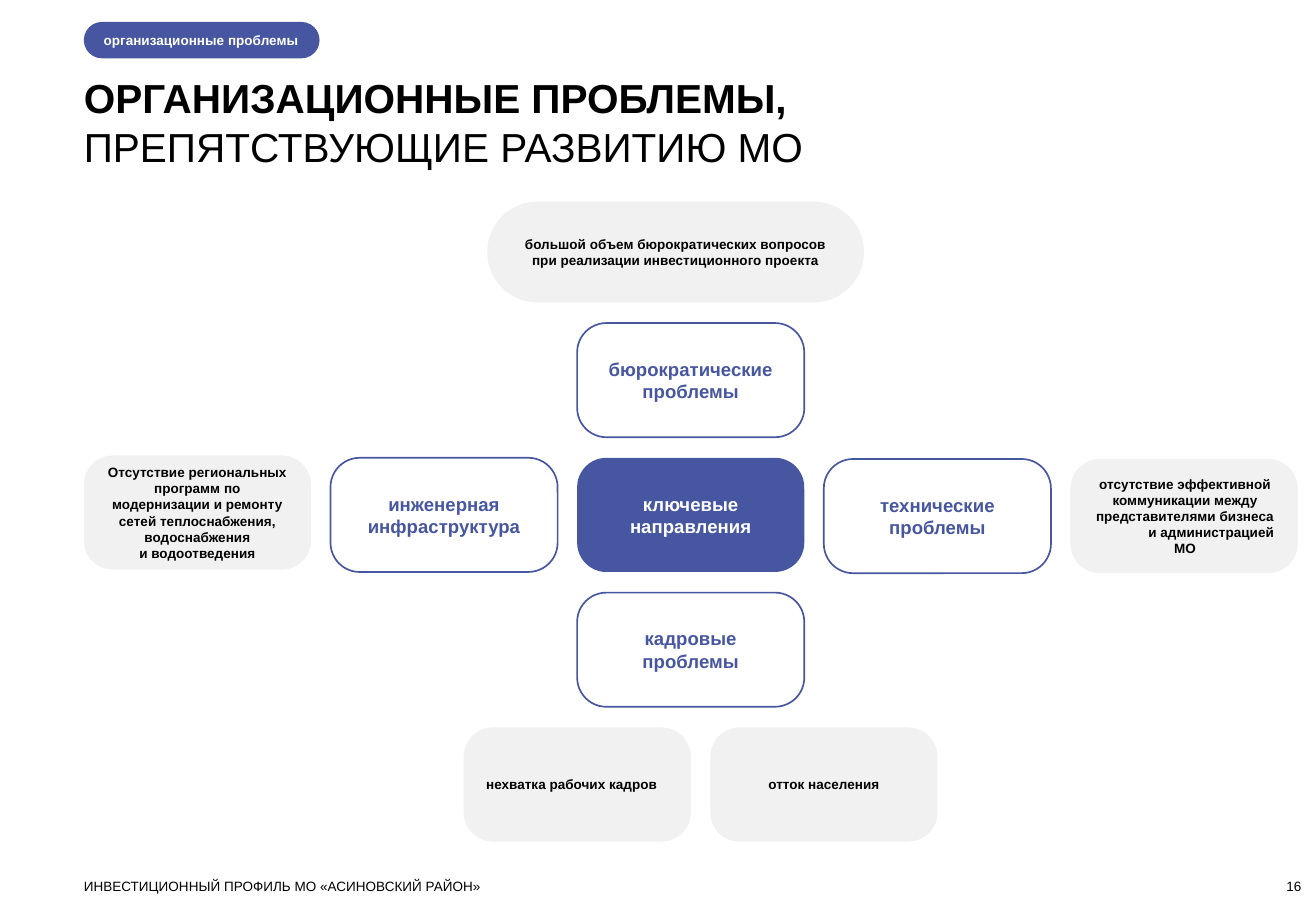
from dataclasses import dataclass

import pptx
import pptx.dml.color
import pptx.enum.shapes
import pptx.enum.text
import pptx.util

Pt = pptx.util.Pt
Align = pptx.enum.text.PP_ALIGN
Anchor = pptx.enum.text.MSO_ANCHOR
RGB = pptx.dml.color.RGBColor


@dataclass(frozen=True)
class Theme:
    font: str = "Arial"
    blue: RGB = RGB(0x47, 0x56, 0xA0)
    grey: RGB = RGB(0xF1, 0xF1, 0xF1)
    black: RGB = RGB(0, 0, 0)
    white: RGB = RGB(0xFF, 0xFF, 0xFF)
    title: int = 24
    label: int = 11
    small: int = 8


THEME = Theme()
LEFT, TOP = 49.7, 191.5
CARD_WIDTH, CARD_HEIGHT = 134.6, 67.7
COLUMN_STEP, ROW_STEP = 146.15, 79.9
NO_INSETS = (0, 0, 0, 0)
CARD_INSETS = (7.2, 3.6, 7.2, 3.6)


def set_frame(box, insets, anchor):
    frame = box.text_frame
    frame.word_wrap = True
    frame.vertical_anchor = anchor
    frame.margin_left, frame.margin_top, frame.margin_right, frame.margin_bottom = map(Pt, insets)


def write(box, lines, size, color, bold=False, align=Align.LEFT):
    """Put each line in its own paragraph and return the paragraphs."""
    frame = box.text_frame
    for index, line in enumerate(lines):
        para = frame.add_paragraph() if index else frame.paragraphs[0]
        para.alignment = align
        span = para.add_run()
        span.text = line
        span.font.name = THEME.font
        span.font.size = Pt(size)
        span.font.bold = bold
        span.font.color.rgb = color
    return frame.paragraphs


def add_text(page, place, lines, size, anchor=Anchor.TOP, align=Align.LEFT):
    box = page.shapes.add_textbox(*map(Pt, place))
    set_frame(box, NO_INSETS, anchor)
    return write(box, lines, size, THEME.black, align=align)


def add_rounded(page, place, rounding, fill=None, insets=CARD_INSETS):
    """Add a filled rounded box, or a blue outlined one when there is no fill."""
    kind = pptx.enum.shapes.MSO_SHAPE.ROUNDED_RECTANGLE
    box = page.shapes.add_shape(kind, *map(Pt, place))
    box.adjustments[0] = rounding
    box.shadow.inherit = False
    if fill is None:
        box.fill.background()
        box.line.color.rgb = THEME.blue
        box.line.width = Pt(1)
    else:
        box.fill.solid()
        box.fill.fore_color.rgb = fill
        box.line.fill.background()
    set_frame(box, insets, Anchor.MIDDLE)
    return box


def add_card(page, column, row, fill=None, insets=CARD_INSETS, shift=0):
    """Add a card at a grid cell, moved down by shift."""
    place = (LEFT + column * COLUMN_STEP, TOP + row * ROW_STEP + shift, CARD_WIDTH, CARD_HEIGHT)
    return add_rounded(page, place, 0.256, fill, insets)


def add_direction(page, column, row, text, fill=None, shift=0):
    card = add_card(page, column, row, fill, shift=shift)
    color = THEME.white if fill else THEME.blue
    write(card, [text], THEME.label, color, True, Align.CENTER)


def add_problem(page, column, row, lines, insets=CARD_INSETS, shift=0):
    card = add_card(page, column, row, THEME.grey, insets, shift)
    return write(card, lines, THEME.small, THEME.black, True, Align.CENTER)


def add_heading(page):
    pill = add_rounded(page, (LEFT, 13, 139.7, 21.6), 0.5, THEME.blue, (8.6, 0, 0, 0))
    write(pill, ["организационные проблемы"], THEME.small, THEME.white, True)
    title = ["ОРГАНИЗАЦИОННЫЕ ПРОБЛЕМЫ,", "ПРЕПЯТСТВУЮЩИЕ РАЗВИТИЮ МО"]
    paras = add_text(page, (LEFT, 43.2, 721.4, 58.3), title, THEME.title)
    for para in paras:
        para.line_spacing = Pt(29)
    paras[0].runs[0].font.bold = True


def add_diagram(page):
    add_direction(page, 2, 0, "бюрократические проблемы")
    add_direction(page, 1, 1, "инженерная инфраструктура")
    add_direction(page, 2, 1, "ключевые направления", THEME.blue)
    add_direction(page, 3, 1, "технические проблемы", shift=0.7)
    add_direction(page, 2, 2, "кадровые проблемы")

    bureaucracy = add_rounded(page, (288.7, 119.5, 223.2, 59.8), 0.5, THEME.grey)
    text = "большой объем бюрократических вопросов при реализации инвестиционного проекта"
    write(bureaucracy, [text], THEME.small, THEME.black, True, Align.CENTER)

    add_problem(page, 0, 1, [
        "Отсутствие региональных программ по модернизации и ремонту "
        "сетей теплоснабжения, водоснабжения",
        "и водоотведения",
    ], shift=-1.4)
    communication = add_problem(page, 4, 1, [
        "отсутствие эффективной",
        "коммуникации между представителями бизнеса",
        "и администрацией",
        "МО",
    ], (7.2, 3.6, 5.8, 3.6), 0.7)
    communication[2]._p.get_or_add_pPr().set("marL", str(Pt(31)))
    add_problem(page, 1.54, 3, ["нехватка рабочих кадров"], (7.2, 3.6, 13.7, 3.6))
    add_problem(page, 2.54, 3, ["отток населения"])


def add_footer(page):
    footer = "ИНВЕСТИЦИОННЫЙ ПРОФИЛЬ МО «АСИНОВСКИЙ РАЙОН»"
    add_text(page, (LEFT, 520.6, 576, 9.4), [footer], THEME.small)
    add_text(page, (713.5, 520.6, 57.6, 9.4), ["16"], THEME.small, Anchor.BOTTOM, Align.RIGHT)


def main():
    deck = pptx.Presentation()
    deck.slide_width, deck.slide_height = Pt(779.76), Pt(540)
    page = deck.slides.add_slide(deck.slide_layouts[6])
    add_heading(page)
    add_diagram(page)
    add_footer(page)
    deck.save("out.pptx")


if __name__ == "__main__":
    main()
